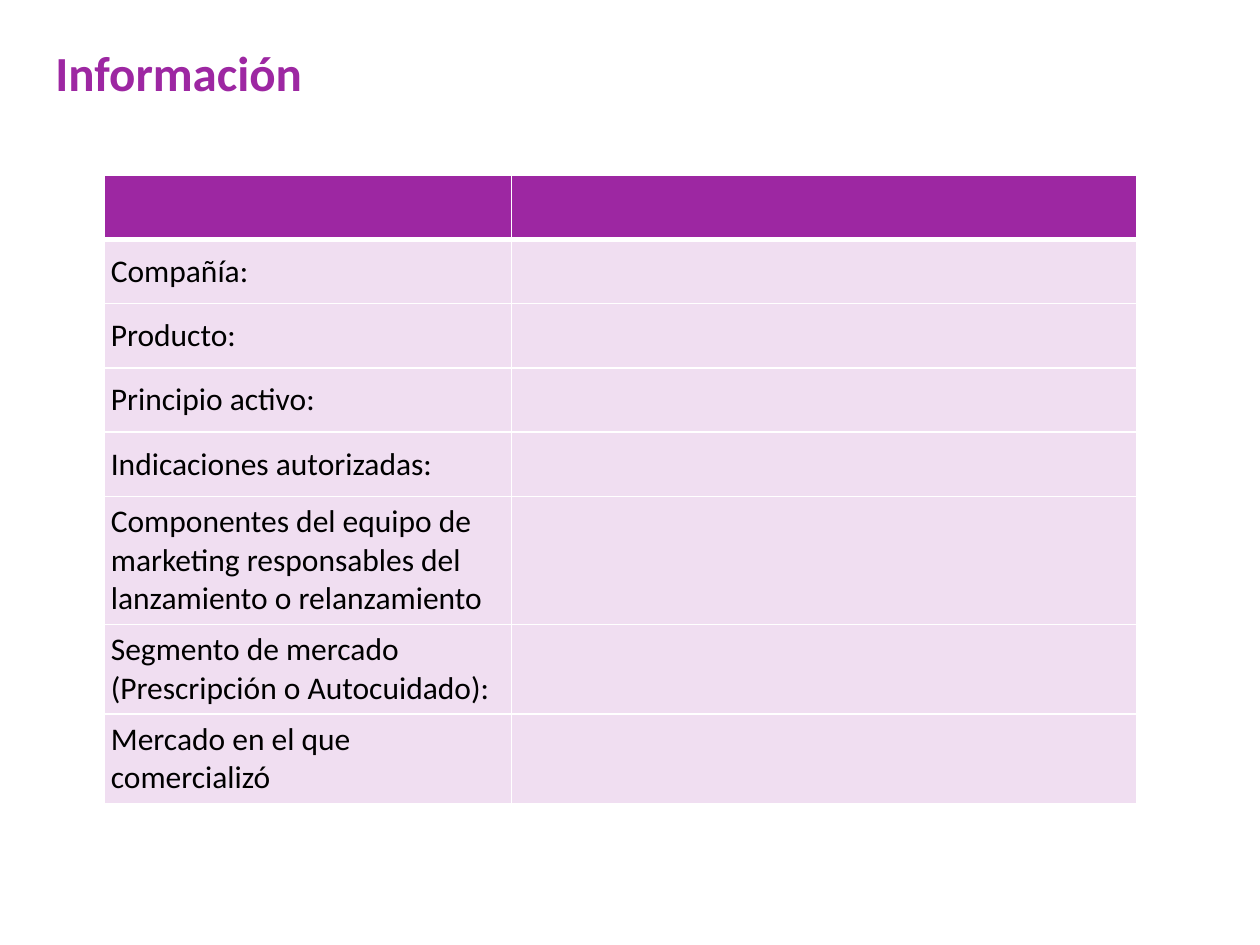
"""Build the product information slide with its two-column form table."""
from lxml.etree import SubElement
from pptx import Presentation
from pptx.dml.color import RGBColor
from pptx.enum.text import MSO_ANCHOR, MSO_AUTO_SIZE
from pptx.oxml.ns import qn
from pptx.util import Inches, Pt

PURPLE, WHITE, BLACK = "9D27A2", "FFFFFF", "000000"
INSETS = dict.fromkeys(
    ("margin_left", "margin_top", "margin_right", "margin_bottom"), Inches(0.05))
LABELS = [
    "",
    "Compañía:",
    "Producto:",
    "Principio activo:",
    "Indicaciones autorizadas:",
    "Componentes del equipo de marketing responsables del lanzamiento o relanzamiento",
    "Segmento de mercado (Prescripción o Autocuidado):",
    "Mercado en el que comercializó",
]
COLS, ROW = (3.23, 4.96), 0.51


def style(obj, values):
    for name, value in values.items():
        setattr(obj, name, value)


def color(fmt, value):
    fmt.rgb = RGBColor.from_string(value)


prs = Presentation()
prs.slide_width, prs.slide_height = Inches(10), Inches(7.5)
s = prs.slides.add_slide(prs.slide_layouts[6])

tbl = s.shapes.add_table(
    len(LABELS), len(COLS), Inches(0.83), Inches(1.39),
    Inches(sum(COLS)), Inches(ROW * len(LABELS))).table
for col, width in zip(tbl.columns, COLS):
    col.width = Inches(width)

for i, label in enumerate(LABELS):
    tbl.rows[i].height = Inches(ROW)
    for j in range(len(COLS)):
        cell = tbl.cell(i, j)
        style(cell, {**INSETS, "vertical_anchor": MSO_ANCHOR.MIDDLE})
        pr = cell._tc.get_or_add_tcPr()
        for side in "LRTB":
            heavy = (i, side) in ((0, "B"), (1, "T"))
            ln = SubElement(pr, qn(f"a:ln{side}"), w=str(Pt(3 if heavy else 1)))
            SubElement(SubElement(ln, qn("a:solidFill")), qn("a:srgbClr"), val=WHITE)
        cell.fill.solid()
        color(cell.fill.fore_color, PURPLE)
        if i:
            SubElement(pr.find(qn("a:solidFill"))[0], qn("a:alpha"), val="15000")
        if label and j == 0:
            r = cell.text_frame.paragraphs[0].add_run()
            r.text = label
            style(r.font, {"name": "Calibri", "size": Pt(18), "bold": False})
            color(r.font.color, BLACK)

sp = s.shapes.add_textbox(Inches(0.39), Inches(0.29), Inches(2.29), Inches(0.54))
tf = sp.text_frame
style(tf, {**INSETS, "word_wrap": False, "auto_size": MSO_AUTO_SIZE.SHAPE_TO_FIT_TEXT})
r = tf.paragraphs[0].add_run()
r.text = "Información"
style(r.font, {"name": "Calibri", "size": Pt(28), "bold": True})
color(r.font.color, PURPLE)

prs.save("out.pptx")
